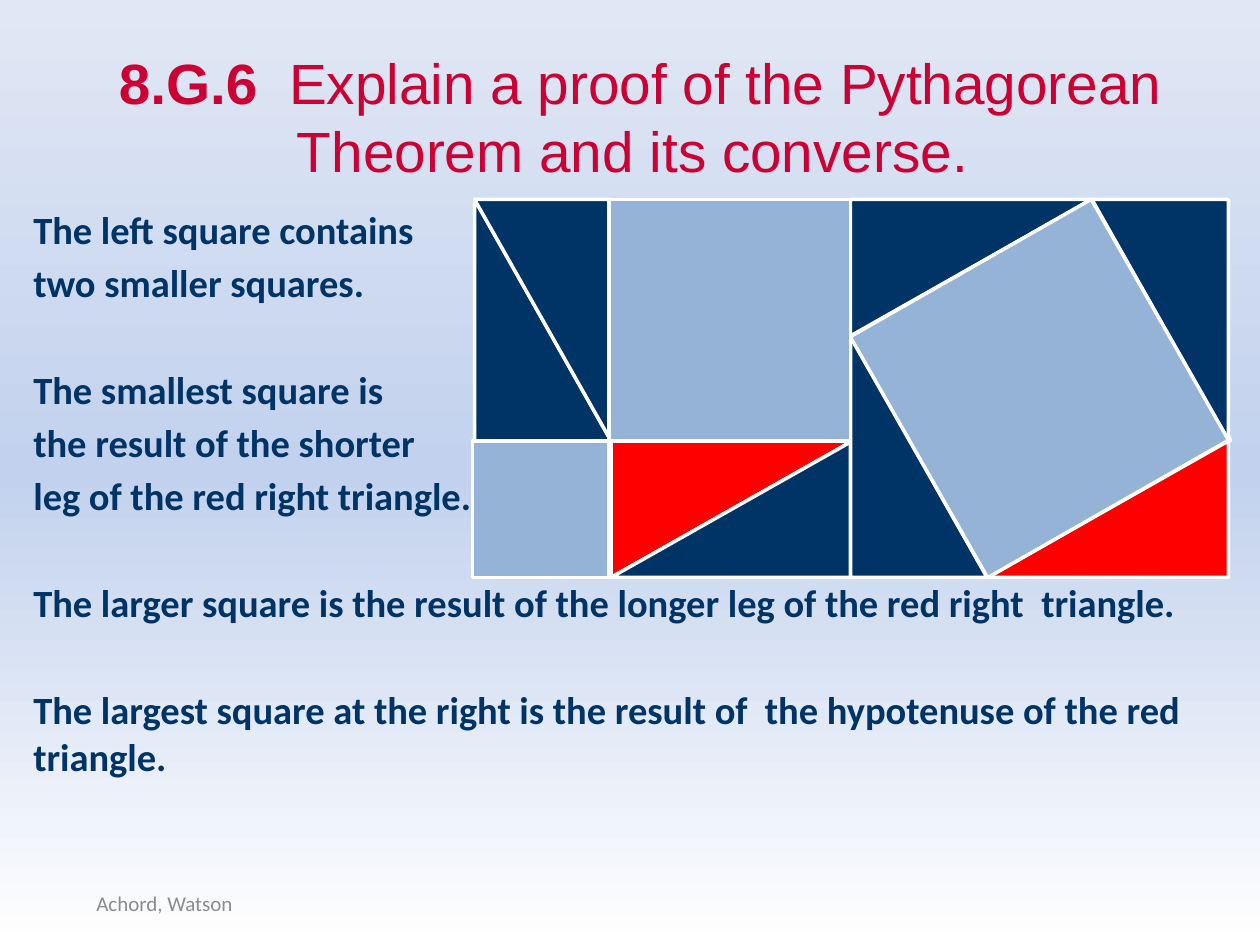
from copy import deepcopy
from math import hypot

from pptx import Presentation
from pptx.dml.color import RGBColor
from pptx.enum.shapes import MSO_SHAPE
from pptx.enum.text import MSO_ANCHOR, PP_ALIGN
from pptx.util import Inches, Pt

NAVY = RGBColor(0x00, 0x33, 0x66)
LIGHT_BLUE = RGBColor(0x95, 0xB3, 0xD7)
RED = RGBColor(0xFF, 0x00, 0x00)
CRIMSON = RGBColor(0xCC, 0x00, 0x33)
GRAY = RGBColor(0x8C, 0x8C, 0x8C)
WHITE = RGBColor(0xFF, 0xFF, 0xFF)
MIST = RGBColor(0xC2, 0xD1, 0xED)
PALE = RGBColor(0xE1, 0xE8, 0xF5)

COLUMNS, ROWS = 120, 90
SHORT, LONG = 13, 23
SIDE = SHORT + LONG
HYPOTENUSE = hypot(SHORT, LONG)
TOP, LEFT = 19, 45
RIGHT = LEFT + SIDE
NUDGE = 0.2
TILT = 330.3
LINE_GAP, SECTION_GAP = 4, 34.8

SENTENCES = [
    ["The left square contains", "two smaller squares."],
    ["The smallest square is", "the result of the shorter", "leg of the red right triangle."],
    ["The larger square is the result of the longer leg of the red right \ttriangle."],
    ["The largest square at the right is the result of  the hypotenuse of the red triangle."],
]


class ProofSlide:
    """Draws styled elements on a 120 by 90 grid."""

    def __init__(self, presentation):
        self.column = presentation.slide_width / COLUMNS
        self.row = presentation.slide_height / ROWS
        self.slide = presentation.slides.add_slide(presentation.slide_layouts[6])

    def box(self, left, top, width, height):
        return (round(left * self.column), round(top * self.row),
                round(width * self.column), round(height * self.row))

    def background(self, colors):
        fill = self.slide.background.fill
        fill.gradient()
        fill.gradient_angle = 90
        stops = self.slide.element.xpath(".//a:gsLst")[0]
        stops.append(deepcopy(stops[-1]))
        for index, (stop, color) in enumerate(zip(fill.gradient_stops, colors)):
            stop.position = index / (len(colors) - 1)
            stop.color.rgb = color

    def text(self, box, paragraphs, font, size, color, anchor=MSO_ANCHOR.TOP, align=PP_ALIGN.LEFT):
        frame = self.slide.shapes.add_textbox(*self.box(*box)).text_frame
        frame.word_wrap = True
        frame.vertical_anchor = anchor
        for index, (gap, runs) in enumerate(paragraphs):
            paragraph = frame.add_paragraph() if index else frame.paragraphs[0]
            paragraph.alignment = align
            paragraph.space_before = Pt(gap)
            for words, bold in runs:
                run = paragraph.add_run()
                run.text = words
                run.font.name = font
                run.font.size = Pt(size)
                run.font.bold = bold
                run.font.color.rgb = color

    def shape(self, kind, box, color, rotation=0):
        shape = self.slide.shapes.add_shape(kind, *self.box(*box))
        shape.shadow.inherit = False
        shape.fill.solid()
        shape.fill.fore_color.rgb = color
        shape.line.color.rgb = WHITE
        shape.line.width = Pt(2)
        shape.rotation = rotation
        return shape

    def squares(self, color, nudge=0):
        inset = (SIDE - HYPOTENUSE) / 2
        for left, top, side, rotation in [
            (RIGHT + inset, TOP + inset, HYPOTENUSE, TILT),
            (LEFT, TOP + LONG, SHORT, 0),
            (LEFT + SHORT, TOP, LONG, 0),
        ]:
            self.shape(MSO_SHAPE.RECTANGLE, (left + nudge, top, side, side), color, rotation)

    def triangle(self, left, top, flip, color=NAVY, standing=False):
        shift = (LONG - SHORT) / 2 if standing else 0
        box = (left - shift, top + shift, LONG, SHORT)
        shape = self.shape(MSO_SHAPE.RIGHT_TRIANGLE, box, color, 270 if standing else 0)
        shape.element.spPr.xfrm.set(flip, "1")


def main():
    presentation = Presentation()
    presentation.slide_width, presentation.slide_height = Inches(10), Inches(7.5)
    proof = ProofSlide(presentation)
    proof.background([WHITE, MIST, PALE])

    lines = [(LINE_GAP if number else SECTION_GAP, [(line, True)])
             for sentence in SENTENCES for number, line in enumerate(sentence)]
    lines[0] = (0, lines[0][1])
    proof.text((2, TOP, 115, 66), lines, "Calibri", 22, NAVY)
    proof.text((8, 83.6, 38, 4.8), [(0, [("Achord, Watson", False)])],
               "Calibri", 12, GRAY, MSO_ANCHOR.MIDDLE)
    title = [("8.G.6  ", True),
             ("Explain a proof of the Pythagorean Theorem and its converse. ", False)]
    proof.text((5.9, 3.5, 110.2, 15), [(0, title)], "Arial", 32.4, CRIMSON,
               MSO_ANCHOR.MIDDLE, PP_ALIGN.CENTER)

    proof.squares(NAVY, NUDGE)
    inner = LEFT + SHORT + NUDGE
    proof.triangle(inner, TOP + LONG, "flipV", RED)
    proof.triangle(inner, TOP + LONG, "flipH")
    for flip in ("flipV", "flipH"):
        proof.triangle(LEFT + NUDGE, TOP, flip, standing=True)
    proof.triangle(RIGHT, TOP + SHORT, "flipV", standing=True)
    proof.triangle(RIGHT, TOP, "flipV")
    proof.triangle(RIGHT + SHORT, TOP + LONG, "flipH", RED)
    proof.triangle(RIGHT + LONG, TOP, "flipH", standing=True)
    proof.squares(LIGHT_BLUE)

    presentation.save("out.pptx")


if __name__ == "__main__":
    main()
